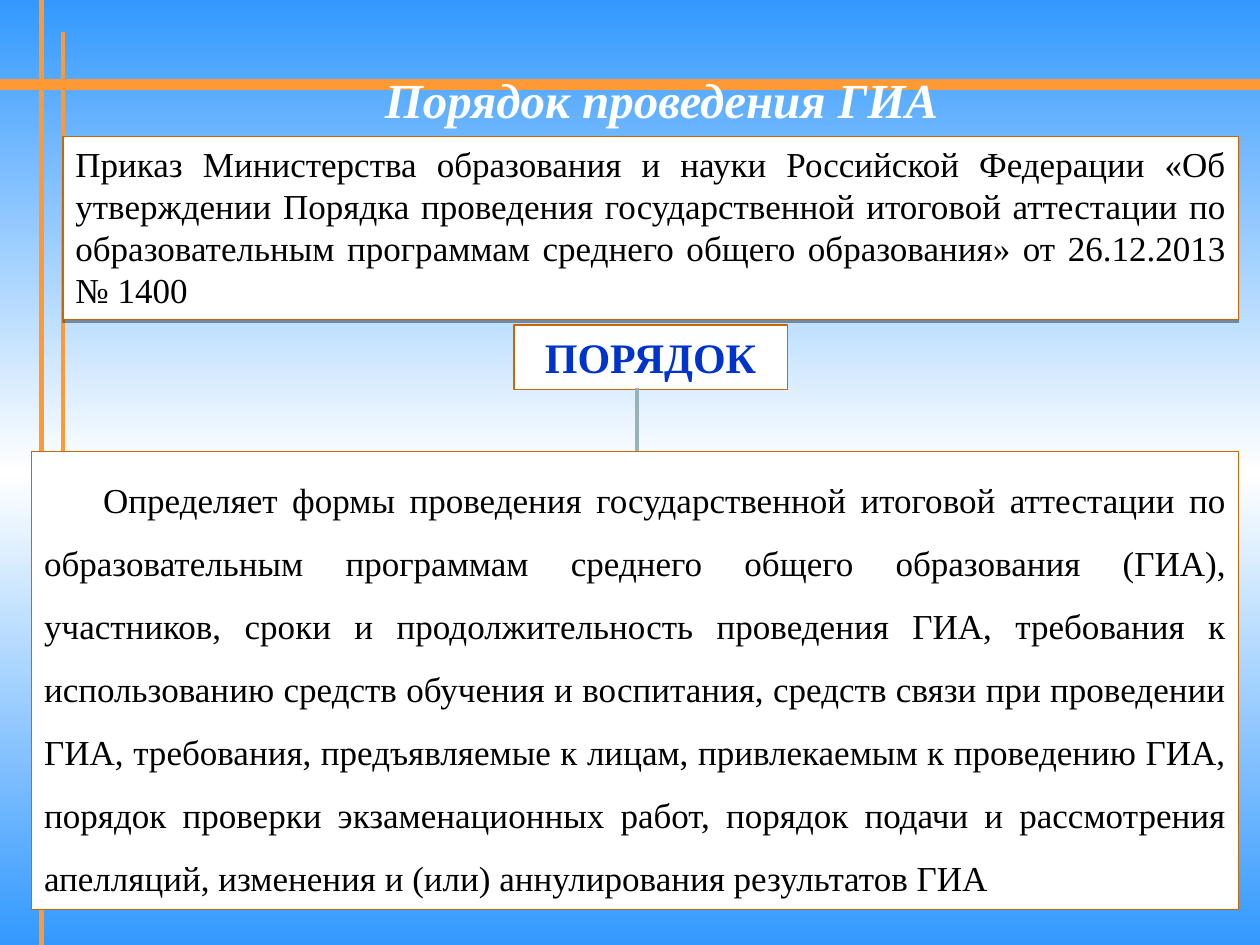
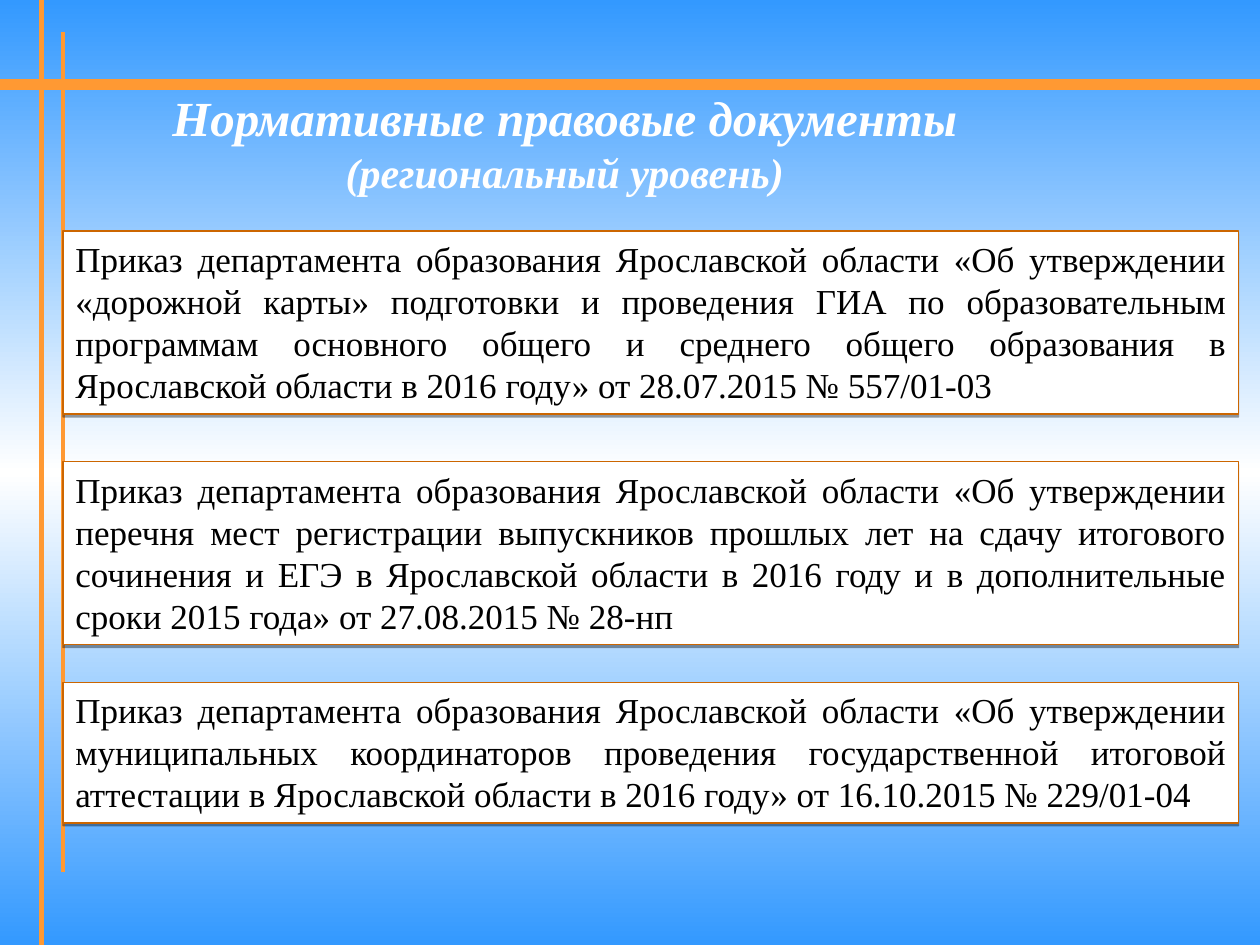
from copy import deepcopy

from lxml import etree
from pptx import Presentation
from pptx.dml.color import RGBColor
from pptx.enum.shapes import MSO_CONNECTOR, MSO_SHAPE
from pptx.enum.text import MSO_ANCHOR, MSO_AUTO_SIZE, PP_ALIGN
from pptx.oxml.ns import qn
from pptx.util import Cm, Pt

RECTANGLE = MSO_SHAPE.RECTANGLE
STRAIGHT = MSO_CONNECTOR.STRAIGHT
TOP, MIDDLE = MSO_ANCHOR.TOP, MSO_ANCHOR.MIDDLE
CENTER, JUSTIFY = PP_ALIGN.CENTER, PP_ALIGN.JUSTIFY

SKY = RGBColor(0x33, 0x99, 0xFF)
WHITE = RGBColor(0xFF, 0xFF, 0xFF)
BLACK = RGBColor(0, 0, 0)
ORANGE = RGBColor(0xFF, 0x99, 0x33)
BROWN = RGBColor(0xCC, 0x66, 0x00)
BLUE = RGBColor(0x00, 0x33, 0xCC)
GREY_GREEN = RGBColor(0x96, 0xB3, 0xB6)
FONT = "Times New Roman"

WIDTH, HEIGHT = 25.4, 19.05
ORDER_LEFT, ORDER_WIDTH = 1.27, 23.7


def add_box(slide, left, top, width, height, text, size=20, color=BLACK,
            bold=False, align=JUSTIFY, shadow=False):
    """Add a white box with a brown outline and return its paragraph."""
    box = slide.shapes.add_shape(RECTANGLE, Cm(left), Cm(top), Cm(width), Cm(height))
    box.fill.solid()
    box.fill.fore_color.rgb = WHITE
    box.line.color.rgb = BROWN
    box.line.width = Pt(0.75)
    box.shadow.inherit = False
    if shadow:
        effects = box.element.spPr.find(qn("a:effectLst"))
        outer = etree.SubElement(effects, qn("a:outerShdw"), blurRad="0",
                                 dist=str(Pt(1.6)), dir="5400000", rotWithShape="0")
        black = etree.SubElement(outer, qn("a:srgbClr"), val="000000")
        etree.SubElement(black, qn("a:alpha"), val="38000")
    frame = box.text_frame
    frame.text = text
    frame.word_wrap = True
    frame.auto_size = MSO_AUTO_SIZE.SHAPE_TO_FIT_TEXT
    frame.vertical_anchor = TOP
    paragraph = frame.paragraphs[0]
    paragraph.alignment = align
    font = paragraph.runs[0].font
    font.name, font.size, font.bold = FONT, Pt(size), bold
    font.color.rgb = color
    return paragraph


def add_line(slide, start, end, color, weight):
    line = slide.shapes.add_connector(STRAIGHT, *(Cm(n) for n in (*start, *end)))
    line.line.color.rgb = color
    line.line.width = Pt(weight)
    etree.SubElement(line.element.spPr, qn("a:effectLst"))
    return line


prs = Presentation()
prs.slide_width, prs.slide_height = Cm(WIDTH), Cm(HEIGHT)
master = prs.slide_master
procedure = prs.slides.add_slide(prs.slide_layouts[5])
regional = prs.slides.add_slide(prs.slide_layouts[5])

# Shared background: blue to white and back to blue
sky = master.background.fill
sky.gradient()
sky.gradient_angle = 270
stop_list = master.element.find(".//" + qn("a:gsLst"))
stop_list.insert(1, deepcopy(stop_list[0]))
for stop, position, color in zip(sky.gradient_stops, (0, 0.5, 1), (SKY, WHITE, SKY)):
    stop.position = position
    stop.color.rgb = color

# Shared orange bands, moved to the master behind its placeholders
bands = [
    ((0, 1.7), (WIDTH, 1.7), 6),
    ((0.84, 0), (0.84, HEIGHT), 3),
    ((1.27, 0.64), (1.27, 17.57), 2.25),
]
for number, (start, end, weight) in enumerate(bands):
    band = add_line(procedure, start, end, ORANGE, weight).element
    band.nvCxnSpPr.cNvPr.set("id", str(100 + number))
    master.shapes.element.insert(2 + number, band)

# Titles
titles = [
    (procedure, (1.27, 1.27, 24.13, 1.45), TOP, [("Порядок проведения ГИА", 28)]),
    (regional, (1.5, 1.7, 23.47, 2.34), MIDDLE,
     [("Нормативные правовые документы", 28), ("(региональный уровень)", 24)]),
]
for slide, place, anchor, lines in titles:
    title = slide.shapes.title
    title.left, title.top, title.width, title.height = (Cm(n) for n in place)
    frame = title.text_frame
    frame.text = "\n".join(text for text, size in lines)
    frame.word_wrap = True
    frame.auto_size = MSO_AUTO_SIZE.NONE
    frame.vertical_anchor = anchor
    for paragraph, (text, size) in zip(frame.paragraphs, lines):
        paragraph.alignment = CENTER
        paragraph.space_before = Pt(0)
        font = paragraph.runs[0].font
        font.name, font.size, font.bold, font.italic = FONT, Pt(size), True, True
        font.color.rgb = WHITE

# The first line of the regional title sits left of centre
regional_heading = regional.shapes.title.text_frame.paragraphs[0]
regional_heading.runs[0].font.size = Pt(28)
regional_heading._p.get_or_add_pPr().set("marR", str(Cm(3.7)))

# Slide 1: the federal order and what it defines
add_box(procedure, 10.36, 6.55, 5.51, 1.3, "ПОРЯДОК", 24, BLUE, True, CENTER)
add_line(procedure, (12.84, 7.83), (12.84, 9.1), GREY_GREEN, 2)
definition = add_box(
    procedure, 0.64, 9.1, 24.33, 9.24,
    "Определяет формы проведения государственной итоговой аттестации по "
    "образовательным программам среднего общего образования (ГИА), участников, "
    "сроки и продолжительность проведения ГИА, требования к использованию средств "
    "обучения и воспитания, средств связи при проведении ГИА, требования, "
    "предъявляемые к лицам, привлекаемым к проведению ГИА, порядок проверки "
    "экзаменационных работ, порядок подачи и рассмотрения апелляций, изменения и "
    "(или) аннулирования результатов ГИА")
definition.line_spacing = 1.5
definition._p.get_or_add_pPr().set("indent", str(Cm(1.19)))

# Orders on both slides
orders = [
    (procedure, 2.75, 3.69,
     "Приказ Министерства образования и науки Российской Федерации «Об утверждении "
     "Порядка проведения государственной итоговой аттестации по образовательным "
     "программам среднего общего образования» от 26.12.2013 № 1400"),
    (regional, 4.66, 3.69,
     "Приказ департамента образования Ярославской области «Об утверждении «дорожной "
     "карты» подготовки и проведения ГИА по образовательным программам основного "
     "общего и среднего общего образования в Ярославской области в 2016 году» "
     "от 28.07.2015 № 557/01-03"),
    (regional, 9.31, 3.69,
     "Приказ департамента образования Ярославской области «Об утверждении перечня "
     "мест регистрации выпускников прошлых лет на сдачу итогового сочинения и ЕГЭ в "
     "Ярославской области в 2016 году и в дополнительные сроки 2015 года» "
     "от 27.08.2015 № 28-нп"),
    (regional, 13.76, 2.83,
     "Приказ департамента образования Ярославской области «Об утверждении "
     "муниципальных координаторов проведения государственной итоговой аттестации в "
     "Ярославской области в 2016 году» от 16.10.2015 № 229/01-04"),
]
for slide, top, height, text in orders:
    add_box(slide, ORDER_LEFT, top, ORDER_WIDTH, height, text, shadow=True)

prs.save("out.pptx")
